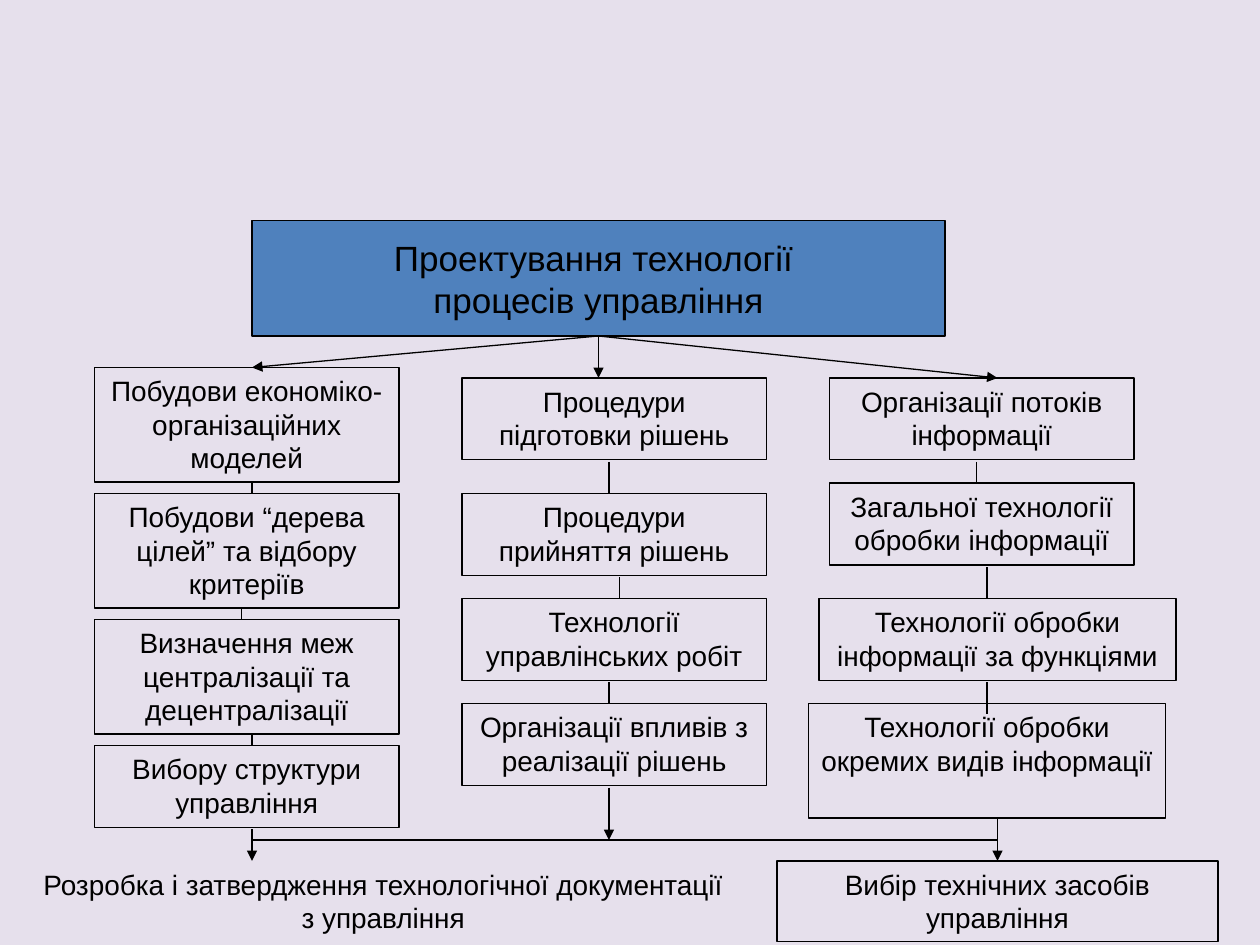
"""Builds a slide with the scheme of designing management process technology."""
import dataclasses
import typing

import pptx
import pptx.dml.color
import pptx.enum.shapes
import pptx.enum.text
import pptx.oxml
import pptx.oxml.ns
import pptx.util

PX = 7620
BLACK = pptx.dml.color.RGBColor(0x00, 0x00, 0x00)
BLUE = pptx.dml.color.RGBColor(0x4F, 0x81, 0xBD)
LILAC = pptx.dml.color.RGBColor(0xE6, 0xE0, 0xEC)
LINE_WIDTH = pptx.util.Pt(0.75)
CENTER = pptx.enum.text.PP_ALIGN.CENTER
TOP = pptx.enum.text.MSO_ANCHOR.TOP
MIDDLE = pptx.enum.text.MSO_ANCHOR.MIDDLE


@dataclasses.dataclass(frozen=True)
class Box:
    text: str
    left: int
    top: int
    width: int = 290
    height: int = 78
    outlined: bool = True


@dataclasses.dataclass(frozen=True)
class Link:
    x1: int
    y1: int
    x2: int
    y2: int
    arrow: bool = False


HEADING = Box("Проектування технології \nпроцесів управління", 240, 210, 660, 110)
STEPS = [
    Box("Побудови економіко-організаційних моделей", 90, 350, height=109),
    Box("Побудови “дерева цілей” та відбору критеріїв", 90, 470, height=109),
    Box("Визначення меж централізації та децентралізації", 90, 590, height=109),
    Box("Вибору структури управління", 90, 710),
    Box("Процедури підготовки рішень", 440, 360),
    Box("Процедури прийняття рішень", 440, 470),
    Box("Технології управлінських робіт", 440, 570),
    Box("Організації впливів з реалізації рішень", 440, 670),
    Box("Організації потоків інформації", 790, 360),
    Box("Загальної технології обробки інформації", 790, 460),
    Box("Технології обробки інформації за функціями", 780, 570, 340),
    Box("Технології обробки окремих видів інформації", 770, 670, 340, 109),
]
DOCUMENTATION = Box(
    "Розробка і затвердження технологічної документації з управління",
    20, 820, 690, 77, outlined=False,
)
EQUIPMENT = Box("Вибір технічних засобів управління", 740, 820, 420, 77)

BRANCHES = [Link(570, 320, x, y, True) for x, y in ((240, 350), (570, 360), (950, 360))]
STEP_LINKS = [
    Link(x, start, x, end)
    for x, start, end in (
        (240, 460, 470), (230, 580, 590), (240, 700, 710),
        (580, 440, 470), (590, 550, 570), (580, 650, 670),
        (930, 440, 460), (940, 540, 570), (940, 650, 680),
    )
]
OUTCOME_LINKS = [
    Link(240, 790, 240, 820, True),
    Link(580, 750, 580, 800, True),
    Link(240, 800, 950, 800),
]
EQUIPMENT_LINK = Link(950, 780, 950, 820, True)


def apply(target: typing.Any, formats: dict[str, typing.Any]) -> None:
    """Set every attribute in the dict of format values."""
    for name, value in formats.items():
        setattr(target, name, value)


def outline(line: typing.Any) -> None:
    """Give a line the common black stroke."""
    line.color.rgb = BLACK
    line.width = LINE_WIDTH


def write(shape: typing.Any, text: str, size: int, anchor: typing.Any, wrap: bool) -> None:
    """Write centred text into a shape."""
    frame = shape.text_frame
    frame.text = text
    apply(frame, {
        "word_wrap": wrap,
        "auto_size": pptx.enum.text.MSO_AUTO_SIZE.NONE,
        "vertical_anchor": anchor,
    })
    for paragraph in frame.paragraphs:
        paragraph.alignment = CENTER
        for run in paragraph.runs:
            apply(run.font, {"name": "Arial", "size": pptx.util.Pt(size)})
            run.font.color.rgb = BLACK


def bounds(box: Box) -> dict[str, int]:
    """Return the position and size of a box in EMU."""
    return {name: getattr(box, name) * PX for name in ("left", "top", "width", "height")}


def draw_heading(slide: typing.Any, box: Box) -> typing.Any:
    """Turn the title placeholder into the filled heading box."""
    title = slide.shapes.title
    apply(title, bounds(box))
    title.fill.solid()
    title.fill.fore_color.rgb = BLUE
    outline(title.line)
    write(title, box.text, 20, MIDDLE, False)
    return title


def draw_box(slide: typing.Any, box: Box) -> typing.Any:
    """Draw an outlined rectangle or a plain text box."""
    place = bounds(box).values()
    if box.outlined:
        shape = slide.shapes.add_shape(pptx.enum.shapes.MSO_SHAPE.RECTANGLE, *place)
        shape.shadow.inherit = False
        shape.fill.background()
        outline(shape.line)
    else:
        shape = slide.shapes.add_textbox(*place)
    write(shape, box.text, 16, TOP, True)
    return shape


def draw_link(slide: typing.Any, link: Link) -> typing.Any:
    """Draw a straight connector with an optional arrowhead."""
    connector = slide.shapes.add_connector(
        pptx.enum.shapes.MSO_CONNECTOR.STRAIGHT,
        *(value * PX for value in (link.x1, link.y1, link.x2, link.y2)),
    )
    outline(connector.line)
    if link.arrow:
        head = pptx.oxml.parse_xml(
            f'<a:tailEnd {pptx.oxml.ns.nsdecls("a")} type="triangle"/>'
        )
        connector.line._get_or_add_ln().append(head)
    connector._element.spPr.append(
        pptx.oxml.parse_xml(f'<a:effectLst {pptx.oxml.ns.nsdecls("a")}/>')
    )
    return connector


def main() -> None:
    """Build and save the slide."""
    deck = pptx.Presentation()
    apply(deck, {"slide_width": 1200 * PX, "slide_height": 900 * PX})
    slide = deck.slides.add_slide(deck.slide_layouts[5])
    slide.background.fill.solid()
    slide.background.fill.fore_color.rgb = LILAC

    heading = draw_heading(slide, HEADING)
    for box in STEPS + [DOCUMENTATION]:
        draw_box(slide, box)
    equipment = draw_box(slide, EQUIPMENT)

    for branch in BRANCHES:
        draw_link(slide, branch).begin_connect(heading, 2)
    for link in STEP_LINKS + OUTCOME_LINKS:
        draw_link(slide, link)
    draw_link(slide, EQUIPMENT_LINK).end_connect(equipment, 0)
    deck.save("out.pptx")


if __name__ == "__main__":
    main()
